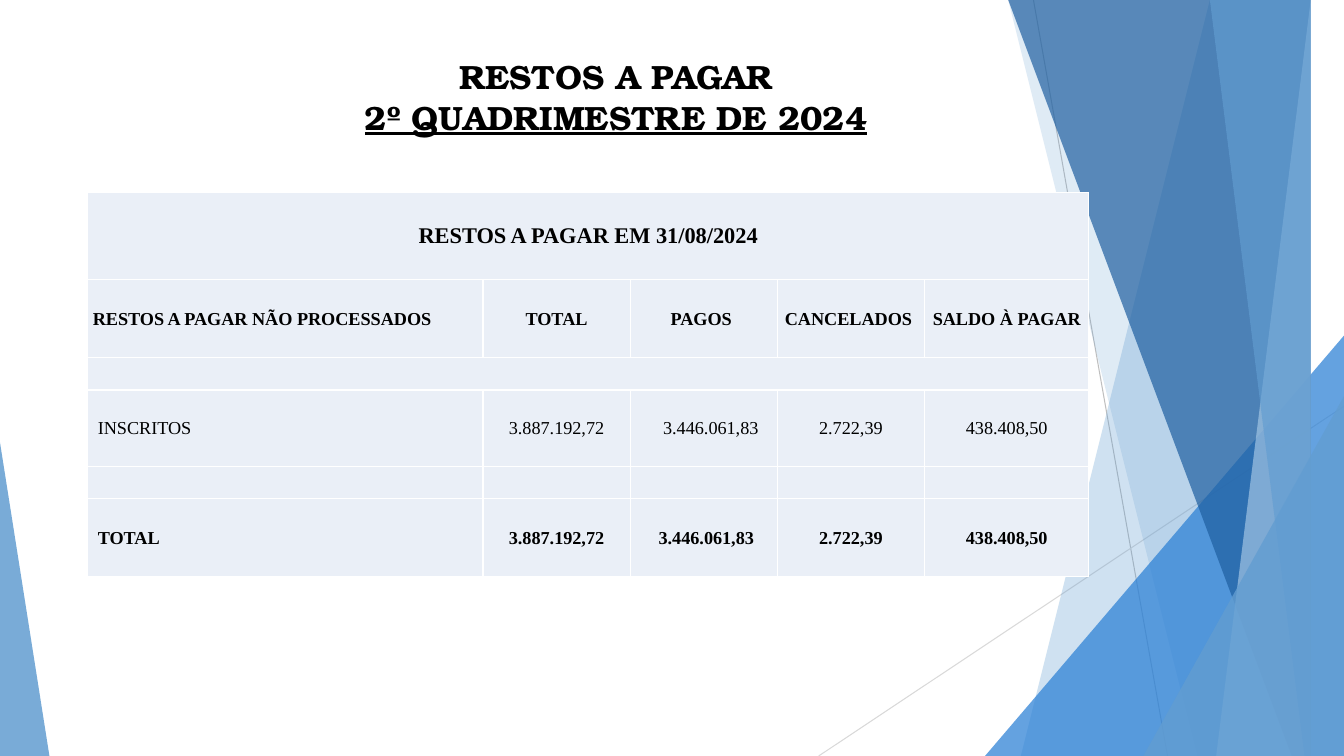
from lxml import etree
from pptx import Presentation
from pptx.dml.color import RGBColor
from pptx.enum.shapes import MSO_CONNECTOR, MSO_SHAPE
from pptx.enum.text import MSO_ANCHOR, PP_ALIGN
from pptx.oxml.ns import qn
from pptx.util import Inches, Pt

LINE = MSO_CONNECTOR.STRAIGHT
WEDGE = MSO_SHAPE.ISOSCELES_TRIANGLE
TOP, MIDDLE = MSO_ANCHOR.TOP, MSO_ANCHOR.MIDDLE
LEFT, CENTER = PP_ALIGN.LEFT, PP_ALIGN.CENTER

BLACK = RGBColor(0x00, 0x00, 0x00)
WHITE = RGBColor(0xFF, 0xFF, 0xFF)
GRAY = RGBColor(0xBF, 0xBF, 0xBF)
SILVER = RGBColor(0xD9, 0xD9, 0xD9)
SKY = RGBColor(0x62, 0x9D, 0xD1)
BLUE = RGBColor(0x29, 0x7F, 0xD5)
NAVY = RGBColor(0x1F, 0x5F, 0xA0)
PALE = RGBColor(0xA1, 0xC4, 0xE3)
CELL = RGBColor(0xEA, 0xEF, 0xF7)

WIDE, HIGH = 13.33, 7.5


class Deck:
    head_font = "TeX Gyre Bonum"
    body_font = "Times New Roman"

    def __init__(self):
        self.prs = Presentation()
        self.prs.slide_width = Inches(WIDE)
        self.prs.slide_height = Inches(HIGH)
        self.slide = self.prs.slides.add_slide(self.prs.slide_layouts[6])
        self.shapes = self.slide.shapes

    def paint(self, shape, color, alpha):
        shape.shadow.inherit = False
        shape.line.fill.background()
        shape.fill.solid()
        shape.fill.fore_color.rgb = color
        tint = shape.fill._xPr.find(qn("a:solidFill"))[0]
        etree.SubElement(tint, qn("a:alpha"), val=str(alpha * 1000))

    def line(self, x1, y1, x2, y2, color):
        line = self.shapes.add_connector(
            LINE, Inches(x1), Inches(y1), Inches(x2), Inches(y2))
        line.line.color.rgb = color
        line.line.width = Pt(0.75)
        etree.SubElement(line._element.spPr, qn("a:effectLst"))

    def band(self, top, foot, color, alpha):
        """Band from a slanted left edge to the right side of the slide."""
        pen = self.shapes.build_freeform(top, -0.01, scale=Inches(1))
        pen.add_line_segments([(WIDE, -0.01), (WIDE, HIGH), (foot, HIGH)])
        self.paint(pen.convert_to_shape(), color, alpha)

    def wedge(self, x, y, width, peak, color, alpha):
        """Triangle that stands on the bottom of the slide."""
        shape = self.shapes.add_shape(
            WEDGE, Inches(x), Inches(y), Inches(width), Inches(HIGH - y))
        shape.adjustments[0] = peak
        self.paint(shape, color, alpha)

    def style(self, run, font, size, bold):
        run.font.name = font
        run.font.size = Pt(size)
        run.font.bold = bold
        run.font.color.rgb = BLACK

    def title(self, x, y, width, height, text):
        box = self.shapes.add_textbox(
            Inches(x), Inches(y), Inches(width), Inches(height))
        frame = box.text_frame
        frame.word_wrap = True
        frame.vertical_anchor = TOP
        frame.text = text
        para = frame.paragraphs[0]
        para.alignment = CENTER
        for run in para.runs:
            self.style(run, self.head_font, 24, True)
        para.runs[-1].font.underline = True

    def cell(self, cell, text, size, bold, align, pads):
        cell.margin_left, cell.margin_right = map(Inches, pads)
        cell.margin_top, cell.margin_bottom = Inches(0.01), 0
        cell.vertical_anchor = MIDDLE
        props = cell._tc.get_or_add_tcPr()
        for side in ("lnL", "lnR", "lnT", "lnB"):
            edge = etree.SubElement(props, qn(f"a:{side}"), w=str(Pt(1)))
            fill = etree.SubElement(edge, qn("a:solidFill"))
            etree.SubElement(fill, qn("a:srgbClr"), val=str(WHITE))
        cell.fill.solid()
        cell.fill.fore_color.rgb = CELL
        cell.text_frame.text = text
        para = cell.text_frame.paragraphs[0]
        para.alignment = align
        for run in para.runs:
            self.style(run, self.body_font, size, bold)

    def table(self, x, y, cols, rows, data, plain, pads):
        table = self.shapes.add_table(
            len(rows), len(cols), Inches(x), Inches(y),
            Inches(sum(cols)), Inches(sum(rows))).table
        table.first_row = table.horz_banding = False
        for col, width in zip(table.columns, cols):
            col.width = Inches(width)
        for r, height in enumerate(rows):
            table.rows[r].height = Inches(height)
            for c in range(len(cols)):
                text = data[r][c] if c < len(data[r]) else ""
                align = LEFT if r and c == 0 else CENTER
                self.cell(table.cell(r, c), text, 13 if r else 16,
                          r != plain, align, pads.get((r, c), (0.01, 0.01)))
            if len(data[r]) == 1:
                table.cell(r, 0).merge(table.cell(r, len(cols) - 1))


def main():
    deck = Deck()

    # Backdrop: thin lines, then translucent bands and wedges
    deck.line(10.25, 0, 11.58, HIGH, GRAY)
    deck.line(WIDE, 4.03, 8.12, HIGH, SILVER)
    deck.band(12.28, 10.04, SKY, 30)
    deck.band(10.5, 11.83, SKY, 20)
    deck.wedge(9.77, 3.33, 3.56, 1, BLUE, 72)
    deck.band(10.21, 12.91, NAVY, 70)
    deck.band(13.03, 11.92, PALE, 70)
    deck.band(11.96, 13.18, SKY, 65)
    deck.wedge(11.34, 3.93, 1.99, 1, SKY, 80)
    deck.wedge(0, 4.39, 0.49, 0, SKY, 85)

    # Title
    deck.title(1.52, 0.51, 9.18, 1.05,
               "RESTOS A PAGAR\v2º QUADRIMESTRE DE 2024")

    # Table
    sums = ["3.887.192,72", "3.446.061,83", "2.722,39", "438.408,50"]
    data = [
        ["RESTOS A PAGAR EM 31/08/2024"],
        ["RESTOS A PAGAR NÃO PROCESSADOS", "TOTAL", "PAGOS", "CANCELADOS",
         "SALDO À PAGAR"],
        [""],
        ["INSCRITOS"] + sums,
        [""] * 5,
        ["TOTAL"] + sums,
    ]
    pads = {(1, 0): (0.05, 0.01), (3, 0): (0.1, 0.01), (5, 0): (0.1, 0.01),
            (1, 2): (0.01, 0.06), (1, 3): (0.01, 0.06),
            (3, 2): (0.15, 0.01), (5, 2): (0.06, 0.01)}
    deck.table(0.87, 1.91, [3.92, 1.46, 1.46, 1.46, 1.63],
               [0.86, 0.78, 0.32, 0.76, 0.32, 0.77], data, 3, pads)

    deck.prs.save("out.pptx")


if __name__ == "__main__":
    main()
